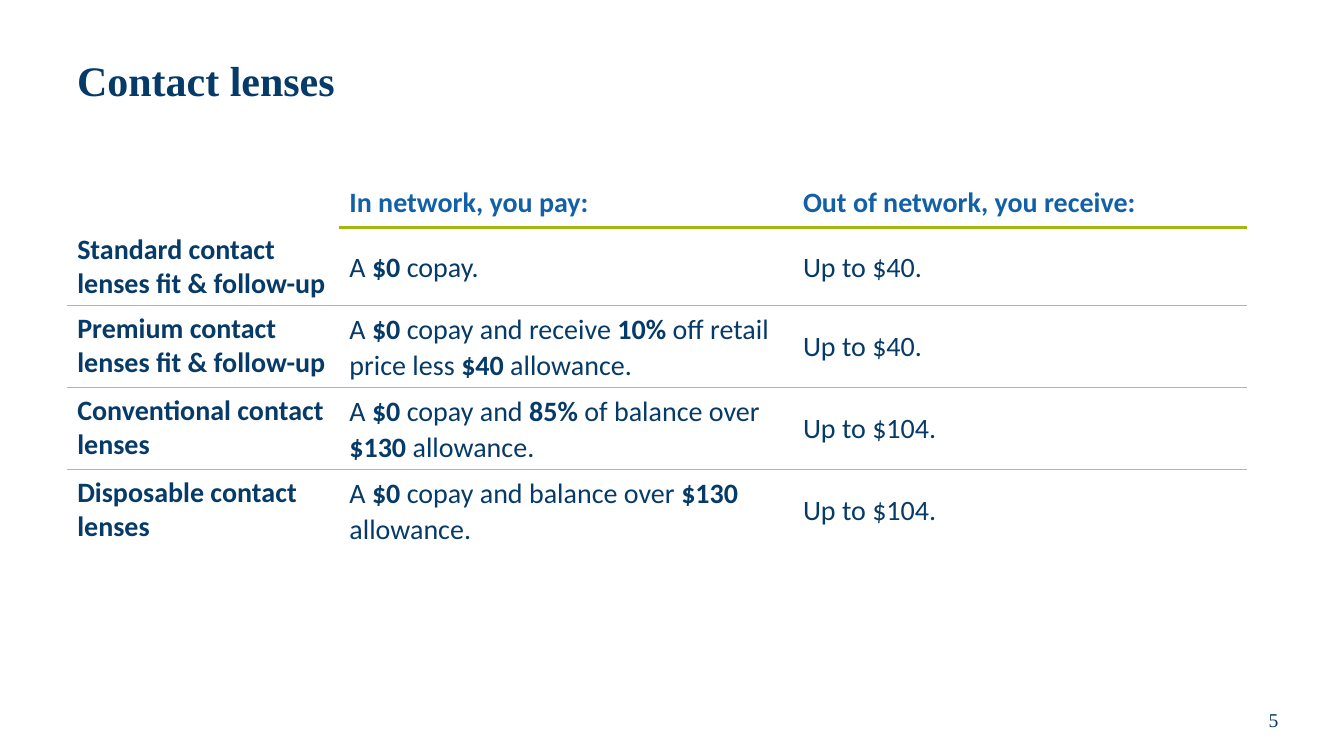
"""Build the contact lens benefits slide."""
from lxml import etree
from pptx import Presentation
from pptx.dml.color import RGBColor
from pptx.enum import text
from pptx.oxml import ns
from pptx.util import Pt

NAVY = RGBColor(0x06, 0x3A, 0x68)
BLUE = RGBColor(0x12, 0x60, 0xA7)
GREEN = RGBColor(0xA0, 0xB8, 0x10)
GREY = RGBColor(0xB2, 0xB2, 0xB2)
SERIF, SANS = "Times New Roman", "Calibri"
HEADER_RULE, ROW_RULE = (GREEN, 2.25), (GREY, 0.5)

COLUMN_WIDTHS = (194.4, 324, 324)
HEADER_HEIGHT, ROW_HEIGHT = 36, 29.5
HEADINGS = ("", "In network, you pay:", "Out of network, you receive:")
BENEFITS = (
    ("Standard contact lenses fit & follow-up", "A **$0** copay.", "Up to $40."),
    ("Premium contact lenses fit & follow-up",
     "A **$0 **copay and receive **10% **off retail price less **$40** allowance.",
     "Up to $40."),
    ("Conventional contact lenses",
     "A **$0** copay and **85% **of balance over **$130 **allowance.", "Up to $104."),
    ("Disposable contact lenses",
     "A **$0** copay and balance over **$130 **allowance.", "Up to $104."),
)


def style_font(font, name, size, color, bold):
    """Set the typeface, size, colour and weight of a font."""
    font.name, font.size, font.bold = name, Pt(size), bold
    font.color.rgb = color


def add_label(slide, words, box, size, bold=False, alignment=None, line_spacing=None):
    """Add a vertically centred serif text box."""
    shape = slide.shapes.add_textbox(*map(Pt, box))
    frame = shape.text_frame
    frame.text = words
    frame.word_wrap = True
    frame.vertical_anchor = text.MSO_ANCHOR.MIDDLE
    paragraph = frame.paragraphs[0]
    paragraph.alignment, paragraph.line_spacing = alignment, line_spacing
    style_font(paragraph.runs[0].font, SERIF, size, NAVY, bold)


def set_borders(cell, top=None, bottom=None):
    """Draw the given top and bottom rules and hide the other borders."""
    properties = cell._tc.get_or_add_tcPr()
    for tag, rule in (("a:lnL", None), ("a:lnR", None), ("a:lnT", top), ("a:lnB", bottom)):
        line = etree.SubElement(properties, ns.qn(tag))
        if rule is None:
            etree.SubElement(line, ns.qn("a:noFill"))
            continue
        color, width = rule
        line.set("w", str(int(Pt(width))))
        fill = etree.SubElement(line, ns.qn("a:solidFill"))
        etree.SubElement(fill, ns.qn("a:srgbClr"), val=str(color))


def fill_cell(cell, words, color, bold, line_spacing=None):
    """Write cell text, giving the parts between double asterisks a bold weight."""
    cell.vertical_anchor = text.MSO_ANCHOR.MIDDLE
    cell.fill.background()
    paragraph = cell.text_frame.paragraphs[0]
    paragraph.line_spacing = line_spacing
    for index, part in enumerate(words.split("**")):
        if part:
            run = paragraph.add_run()
            run.text = part
            style_font(run.font, SANS, 20, color, bold or index % 2 == 1)


def add_benefits_table(slide):
    """Add the table that compares in-network and out-of-network benefits."""
    row_count = len(BENEFITS) + 1
    height = HEADER_HEIGHT + ROW_HEIGHT * len(BENEFITS)
    table = slide.shapes.add_table(row_count, len(HEADINGS), Pt(48), Pt(126.72),
                                   Pt(sum(COLUMN_WIDTHS)), Pt(height)).table
    table.first_row = table.horz_banding = False
    for column, width in zip(table.columns, COLUMN_WIDTHS):
        column.width = Pt(width)
    table.rows[0].height = Pt(HEADER_HEIGHT)
    for index, heading in enumerate(HEADINGS):
        cell = table.cell(0, index)
        set_borders(cell, bottom=HEADER_RULE if heading else None)
        fill_cell(cell, heading, BLUE, True)
    for row, benefit in enumerate(BENEFITS, start=1):
        table.rows[row].height = Pt(ROW_HEIGHT)
        for index, words in enumerate(benefit):
            cell = table.cell(row, index)
            first_rule = HEADER_RULE if HEADINGS[index] else None
            set_borders(cell, top=first_rule if row == 1 else ROW_RULE,
                        bottom=ROW_RULE if row < len(BENEFITS) else None)
            fill_cell(cell, words, NAVY, index == 0, 1.07 if index else None)


def main():
    """Build and save the presentation."""
    presentation = Presentation()
    presentation.slide_width, presentation.slide_height = Pt(960), Pt(540)
    slide = presentation.slides.add_slide(presentation.slide_layouts[6])
    add_label(slide, "Contact lenses", (48, 18, 864, 82.8), 30, bold=True, line_spacing=0.9)
    add_benefits_table(slide)
    add_label(slide, "5", (867.6, 496, 84.24, 36), 14, alignment=text.PP_ALIGN.CENTER)
    presentation.save("out.pptx")


if __name__ == "__main__":
    main()
